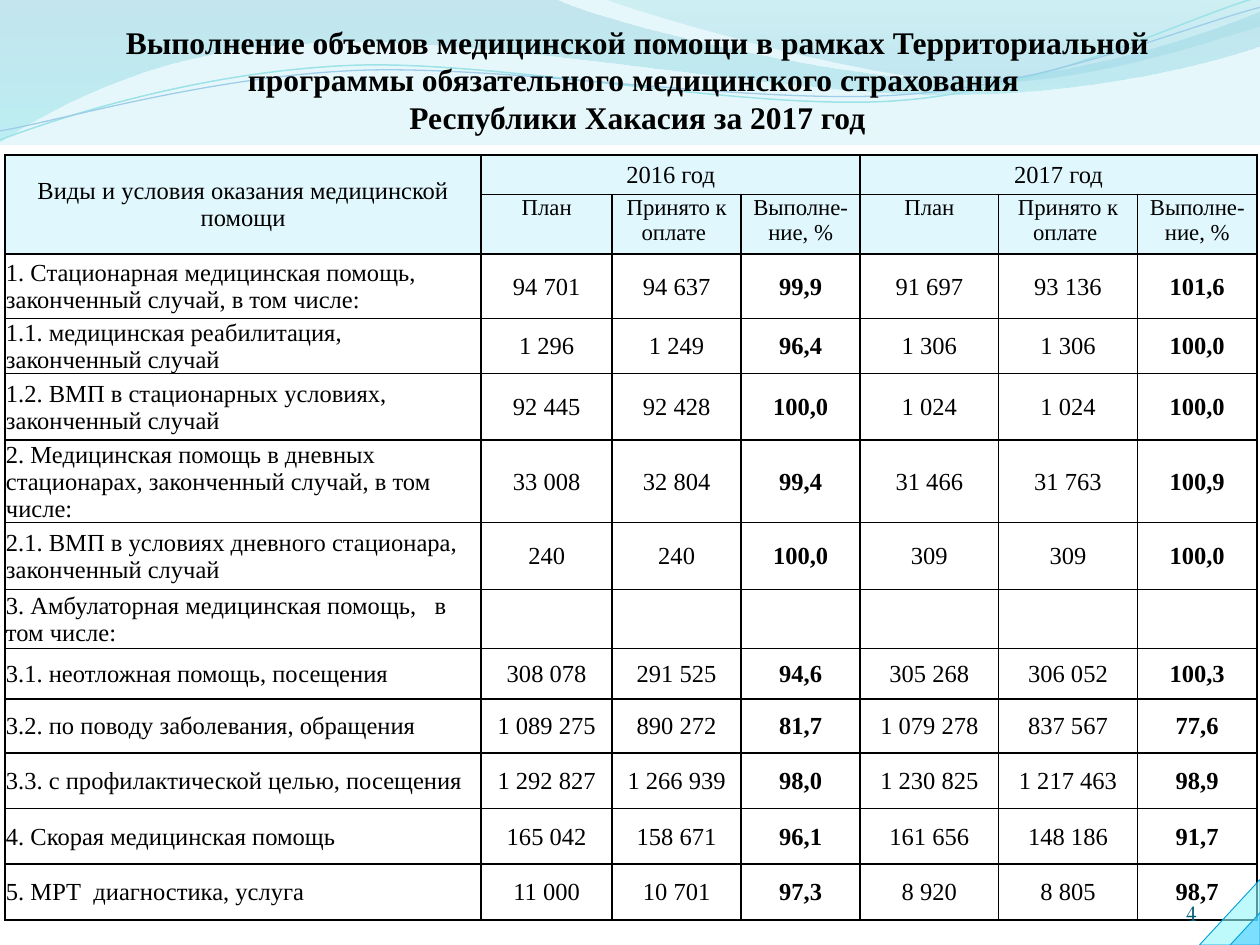
from lxml.etree import SubElement
from pptx import Presentation
from pptx.dml.color import RGBColor
from pptx.enum.shapes import MSO_SHAPE
from pptx.enum.text import MSO_ANCHOR as ANCHOR, MSO_AUTO_SIZE, PP_ALIGN as ALIGN
from pptx.oxml import parse_xml
from pptx.oxml.ns import nsdecls, qn
from pptx.util import Cm, Pt

BLACK = RGBColor(0x00, 0x00, 0x00)
BAND = RGBColor(0xDB, 0xF5, 0xF9)
HEADER = RGBColor(0x6B, 0xDB, 0xFA)
NUMBER = RGBColor(0x04, 0x5D, 0x75)
EDGE = RGBColor(0x00, 0x9D, 0xD9)
DEEP_BLUE = RGBColor(0x00, 0x74, 0xA1)
CYAN = RGBColor(0x00, 0xC6, 0xCF)
TEAL = RGBColor(0x00, 0xA1, 0xA9)
BLUE = RGBColor(0x00, 0x8B, 0xBF)
LINE_TEAL = RGBColor(0x0A, 0xB8, 0xBF)
LINE_BLUE = RGBColor(0x0F, 0x6F, 0xC6)
PALE_CYAN = RGBColor(0x94, 0xF5, 0xFA)
SKY = RGBColor(0x4F, 0xCE, 0xFF)
SERIF = "Times New Roman"


def set_opacity(props, *percents):
    """Give the RGB colours inside props their opacities, in order."""
    for clr, percent in zip(props.iter(qn("a:srgbClr")), percents):
        SubElement(clr, qn("a:alpha")).set("val", str(percent * 1000))


def add_wave(shapes, start, segments, close):
    """Draw lines (1 point) and cubic curves (3 points), given in cm."""
    points = [(Cm(x), Cm(y)) for seg in segments for x, y in seg]
    builder = shapes.build_freeform(Cm(start[0]), Cm(start[1]))
    builder.add_line_segments(points, close=close)
    s = builder.convert_to_shape()
    s.shadow.inherit = False
    steps = iter(list(s._element.spPr.iter(qn("a:lnTo"))))
    for seg in segments:
        first, *others = [next(steps) for _ in seg]
        if others:
            first.tag = qn("a:cubicBezTo")
            for step in others:
                first.append(step[0])
                step.getparent().remove(step)
    return s


prs = Presentation()
prs.slide_width, prs.slide_height = Cm(25.4), Cm(19.05)
slide = prs.slides.add_slide(prs.slide_layouts[5])
shapes = slide.shapes

# Filled waves: start, segments, gradient stops (position, colour), opacities
filled_waves = [
    ((0, 0),
     [[(11.18, -0.03)],
      [(12.09, 0.43), (16.87, 1.6), (19.25, 1.6)],
      [(21.67, 1.6), (24.33, 0.66), (25.4, 0.23)],
      [(25.43, 0.91)],
      [(24.97, 1.12), (22.1, 1.93), (18.95, 1.91)],
      [(15.8, 1.91), (9.7, 0.71), (6.53, 0.86)],
      [(3.28, 0.91), (1.17, 2.11), (-0.03, 2.87)]],
     [(0, DEEP_BLUE), (1, CYAN)], (45, 55)),
    ((12.17, -0.03),
     [[(12.93, 0.28), (17.32, 1.57), (19.53, 1.65)],
      [(21.74, 1.75), (24.41, 0.81), (25.4, 0.53)],
      [(25.4, 0)]],
     [(0, TEAL), (0.8, BLUE)], (30, 45)),
]
for start, segments, stops, opacities in filled_waves:
    s = add_wave(shapes, start, segments, True)
    s.fill.gradient()
    s.fill.gradient_angle = 270
    for stop, (position, color) in zip(s.fill.gradient_stops, stops):
        stop.position = position
        stop.color.rgb = color
    set_opacity(s._element.spPr, *opacities)
    s.line.fill.background()

wave_lines = [
    ((0, 2.82),
     [[(1.22, 2.36), (4.01, 1.45), (7.04, 1.32)],
      [(10.03, 1.19), (15.06, 2.26), (18.11, 2.03)],
      [(21.16, 1.8), (23.83, 0.38), (25.35, -0.05)]], LINE_TEAL, 0.85),
    ((0, 2.64),
     [[(1.19, 2.44), (4.17, 1.55), (7.19, 1.42)],
      [(10.24, 1.3), (15.16, 2.13), (18.21, 1.91)],
      [(21.23, 1.7), (23.9, 0.53), (25.4, 0.15)]], LINE_BLUE, 0.75),
]
for start, segments, color, width in wave_lines:
    s = add_wave(shapes, start, segments, False)
    s.fill.background()
    s.line.color.rgb = color
    s.line.width = Pt(width)

# Pale band behind the title
s = shapes.add_shape(MSO_SHAPE.RECTANGLE, 0, 0, Cm(25.42), Cm(2.92))
s.shadow.inherit = False
s.fill.solid()
s.fill.fore_color.rgb = BAND
set_opacity(s._element.spPr, 70)
s.line.fill.background()

# Title, brought in front of the band
title = shapes.title
title.left, title.top, title.width, title.height = Cm(1.09), Cm(0.33), Cm(23.39), Cm(2.21)
shapes._spTree.append(title._element)
tf = title.text_frame
tf.text = ("Выполнение объемов медицинской помощи в рамках Территориальной "
           "программы обязательного медицинского страхования \n"
           "Республики Хакасия за 2017 год")
tf.auto_size = MSO_AUTO_SIZE.NONE
tf.vertical_anchor = ANCHOR.TOP
for p in tf.paragraphs:
    p.alignment = ALIGN.CENTER
    p.line_spacing = 1.0
    p.space_before = Pt(0)
    p._p.get_or_add_pPr().set("marL", str(Cm(0.13)))
    font = p.runs[0].font
    font.name, font.size, font.bold = SERIF, Pt(18), True
    font.color.rgb = BLACK

# Table
year_heads = ["План", "Принято к оплате ", "Выполне-ние, %"]
rows = [
    ["Виды и условия оказания медицинской помощи", "2016 год", "", "", "2017 год", "", ""],
    ["", *year_heads, *year_heads],
    ["1. Стационарная медицинская помощь, законченный случай, в том числе:",
     "94 701", "94 637", "99,9", "91 697", "93 136", "101,6"],
    ["1.1. медицинская реабилитация, законченный случай",
     "1 296", "1 249", "96,4", "1 306", "1 306", "100,0"],
    ["1.2. ВМП в стационарных условиях, законченный случай",
     "92 445", "92 428", "100,0", "1 024", "1 024", "100,0"],
    ["2. Медицинская помощь в дневных стационарах, законченный случай, в том числе:",
     "33 008", "32 804", "99,4", "31 466", "31 763", "100,9"],
    ["2.1. ВМП в условиях дневного стационара, законченный случай",
     "240", "240", "100,0", "309", "309", "100,0"],
    ["3. Амбулаторная медицинская помощь,   в том числе:", "", "", "", "", "", ""],
    ["3.1. неотложная помощь, посещения",
     "308 078", "291 525", "94,6", "305 268", "306 052", "100,3"],
    ["3.2. по поводу заболевания, обращения",
     "1 089 275", "890 272", "81,7", "1 079 278", "837 567", "77,6"],
    ["3.3. с профилактической целью, посещения",
     "1 292 827", "1 266 939", "98,0", "1 230 825", "1 217 463", "98,9"],
    ["4. Скорая медицинская помощь",
     "165 042", "158 671", "96,1", "161 656", "148 186", "91,7"],
    ["5. МРТ  диагностика, услуга",
     "11 000", "10 701", "97,3", "8 920", "8 805", "98,7"],
]
col_widths = [9.6, 2.64, 2.6, 2.4, 2.79, 2.8, 2.41]
row_heights = [0.8, 1.2, 1.3, 0.66, 1.34, 1.35, 1.35, 1.19, 1.02, 1.09, 1.12, 1.12, 1.12]

frame = shapes.add_table(len(rows), len(col_widths), Cm(0.1), Cm(3.12), Cm(25.25), Cm(15.67))
table = frame.table
table.first_row = table.horz_banding = False
for col, width in zip(table.columns, col_widths):
    col.width = Cm(width)
for row, height in zip(table.rows, row_heights):
    row.height = Cm(height)
frame.height = Cm(15.67)

for i, row in enumerate(rows):
    for j, text in enumerate(row):
        cell = table.cell(i, j)
        cell.margin_left = cell.margin_right = cell.margin_top = Cm(0.02)
        cell.margin_bottom = 0
        cell.vertical_anchor = ANCHOR.TOP if i == 1 else ANCHOR.MIDDLE
        cell.text_frame.text = text
        p = cell.text_frame.paragraphs[0]
        p.alignment = ALIGN.LEFT if i > 1 and j == 0 else ALIGN.CENTER
        for font in [p.font] + [r.font for r in p.runs]:
            font.name, font.size = SERIF, Pt(13 if i == 1 else 14)
            font.bold = i > 1 and j in (3, 6)
            font.color.rgb = BLACK
        tcPr = cell._tc.get_or_add_tcPr()
        if i < 2:
            cell.fill.solid()
            cell.fill.fore_color.rgb = HEADER
            set_opacity(tcPr, 20)
        else:
            cell.fill.background()
        for k, side in enumerate(("lnL", "lnR", "lnT", "lnB")):
            tcPr.insert(k, parse_xml(
                f'<a:{side} {nsdecls("a")} w="{Pt(1)}"><a:solidFill>'
                f'<a:srgbClr val="{BLACK}"/></a:solidFill></a:{side}>'))
table.cell(0, 0).merge(table.cell(1, 0))
for j in (1, 4):
    table.cell(0, j).merge(table.cell(0, j + 2))

# Slide number
s = shapes.add_textbox(Cm(22.02), Cm(17.65), Cm(2.11), Cm(1.02))
tf = s.text_frame
tf.word_wrap = True
tf.margin_left = tf.margin_right = tf.margin_top = tf.margin_bottom = 0
tf.vertical_anchor = ANCHOR.BOTTOM
tf.text = "4"
p = tf.paragraphs[0]
p.alignment = ALIGN.RIGHT
font = p.runs[0].font
font.name, font.size = "TeX Gyre Pagella", Pt(12)
font.color.rgb = NUMBER

# Corner triangles
for x, y, w, h, color in [(24.13, 17.78, 1.32, 1.22, PALE_CYAN),
                          (24.77, 18.42, 0.66, 0.61, SKY)]:
    s = shapes.add_shape(MSO_SHAPE.RIGHT_TRIANGLE, Cm(x), Cm(y), Cm(w), Cm(h))
    s.rotation = 270
    s.shadow.inherit = False
    s.fill.solid()
    s.fill.fore_color.rgb = color
    set_opacity(s._element.spPr, 60)
    s.line.color.rgb = EDGE
    s.line.width = Pt(0.5)

prs.save("out.pptx")
